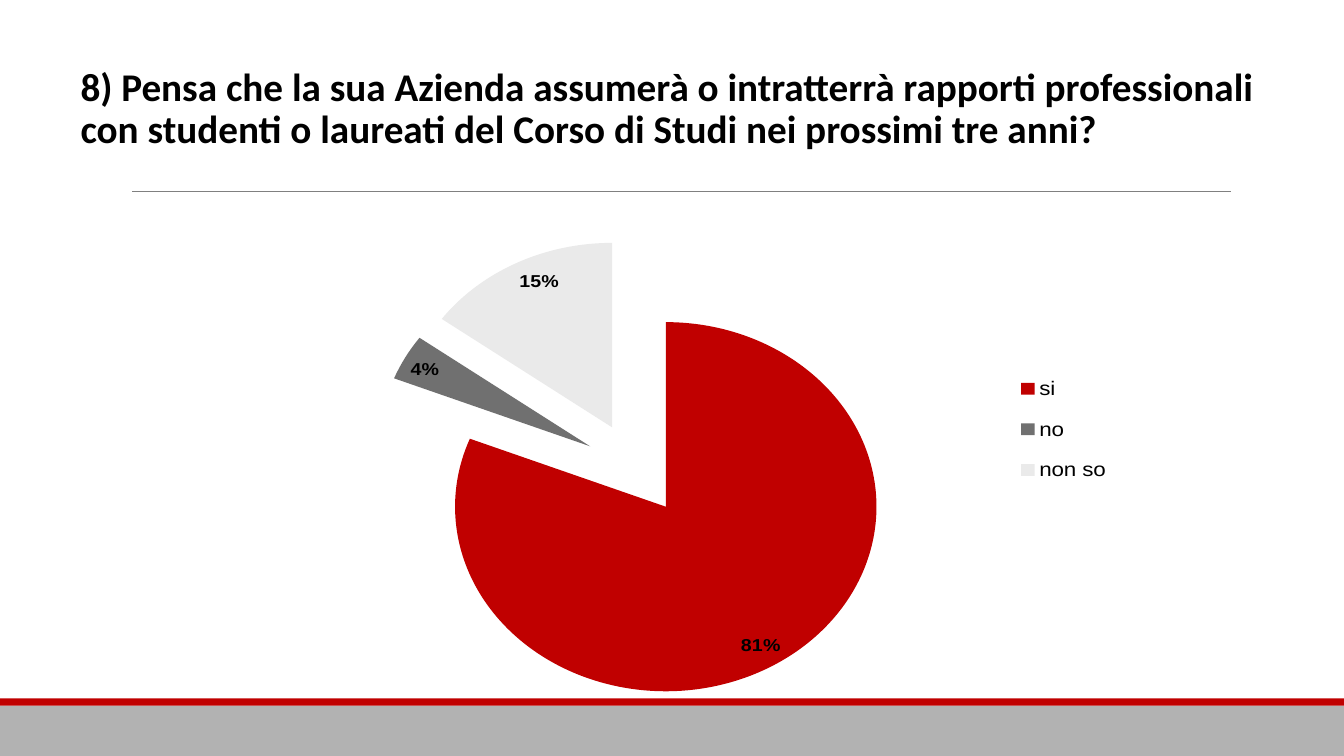
from dataclasses import dataclass

from lxml.etree import SubElement
from pptx import Presentation
from pptx.chart.chart import Chart
from pptx.chart.data import CategoryChartData
from pptx.dml.color import RGBColor
from pptx.enum.chart import XL_CHART_TYPE, XL_LABEL_POSITION, XL_LEGEND_POSITION
from pptx.enum.shapes import MSO_CONNECTOR, MSO_SHAPE
from pptx.enum.text import MSO_ANCHOR
from pptx.oxml import parse_xml
from pptx.oxml.ns import nsdecls, qn
from pptx.slide import Slide
from pptx.util import Cm, Pt


@dataclass(frozen=True)
class Theme:
    title_font: str = "Calibri"
    chart_font: str = "Arial"
    title_size: float = 28
    legend_size: float = 16
    label_size: float = 14
    text: RGBColor = RGBColor(0, 0, 0)
    red: RGBColor = RGBColor(0xC0, 0, 0)
    dark_gray: RGBColor = RGBColor(0x70, 0x70, 0x70)
    light_gray: RGBColor = RGBColor(0xEA, 0xEA, 0xEA)
    footer_gray: RGBColor = RGBColor(0xB2, 0xB2, 0xB2)
    rule_gray: RGBColor = RGBColor(0x80, 0x80, 0x80)


@dataclass(frozen=True)
class Band:
    top: float
    height: float
    color: RGBColor


@dataclass(frozen=True)
class Answer:
    name: str
    percent: int
    color: RGBColor


@dataclass(frozen=True)
class Layout:
    x: float
    y: float
    w: float
    h: float


THEME = Theme()
SLIDE_WIDTH = 33.87
SLIDE_HEIGHT = 19.05
EXPLOSION = 25
TITLE = (
    "8) Pensa che la sua Azienda assumerà o intratterrà rapporti professionali "
    "con studenti o laureati del Corso di Studi nei prossimi tre anni?"
)
BANDS = [
    Band(17.78, 1.27, THEME.footer_gray),
    Band(17.6, 0.18, THEME.red),
]
ANSWERS = [
    Answer("si", 81, THEME.red),
    Answer("no", 4, THEME.dark_gray),
    Answer("non so", 15, THEME.light_gray),
]
PLOT_LAYOUT = Layout(0.21, 0.03, 0.48, 0.94)
LEGEND_LAYOUT = Layout(0.87, 0.22, 0.12, 0.36)


def add_band(slide: Slide, band: Band) -> None:
    shape = slide.shapes.add_shape(
        MSO_SHAPE.RECTANGLE, 0, Cm(band.top), Cm(SLIDE_WIDTH), Cm(band.height)
    )
    shape.shadow.inherit = False
    shape.fill.solid()
    shape.fill.fore_color.rgb = band.color
    shape.line.fill.background()


def add_rule(slide: Slide) -> None:
    connector = slide.shapes.add_connector(
        MSO_CONNECTOR.STRAIGHT, Cm(3.33), Cm(4.82), Cm(31.01), Cm(4.82)
    )
    connector.line.color.rgb = THEME.rule_gray
    connector.line.width = Pt(0.5)
    SubElement(connector._element.spPr, qn("a:effectLst"))


def add_title(slide: Slide) -> None:
    shape = slide.shapes.add_textbox(Cm(2.03), Cm(1.7), Cm(30), Cm(3.18))
    frame = shape.text_frame
    frame.word_wrap = True
    frame.vertical_anchor = MSO_ANCHOR.TOP
    frame.margin_left = frame.margin_right = 0
    frame.margin_top = frame.margin_bottom = 0
    paragraph = frame.paragraphs[0]
    paragraph.text = TITLE
    paragraph.line_spacing = 0.9
    paragraph.font.name = THEME.title_font
    paragraph.font.size = Pt(THEME.title_size)
    paragraph.font.bold = True
    paragraph.font.color.rgb = THEME.text


def layout_xml(layout: Layout, target: str = ""):
    return parse_xml(
        f'<c:layout {nsdecls("c")}><c:manualLayout>{target}'
        '<c:xMode val="edge"/><c:yMode val="edge"/>'
        f'<c:x val="{layout.x}"/><c:y val="{layout.y}"/>'
        f'<c:w val="{layout.w}"/><c:h val="{layout.h}"/>'
        "</c:manualLayout></c:layout>"
    )


def place_plot_and_legend(chart: Chart) -> None:
    plot_area = chart._chartSpace.chart.plotArea
    for previous in plot_area.findall(qn("c:layout")):
        plot_area.remove(previous)
    plot_area.insert(0, layout_xml(PLOT_LAYOUT, '<c:layoutTarget val="inner"/>'))
    legend = chart.legend._element
    for previous in legend.findall(qn("c:layout")):
        legend.remove(previous)
    legend.find(qn("c:legendPos")).addnext(layout_xml(LEGEND_LAYOUT))


def add_answer_chart(slide: Slide) -> None:
    data = CategoryChartData()
    data.categories = [answer.name for answer in ANSWERS]
    data.add_series("Series 1", [answer.percent for answer in ANSWERS])
    chart = slide.shapes.add_chart(
        XL_CHART_TYPE.PIE, Cm(5.94), Cm(6.12), Cm(22.43), Cm(11.3), data
    ).chart
    chart.has_title = False
    chart.font.name = THEME.chart_font
    chart.font.size = Pt(10)
    chart.font.color.rgb = THEME.text

    chart.has_legend = True
    chart.legend.position = XL_LEGEND_POSITION.RIGHT
    chart.legend.include_in_layout = False
    chart.legend.font.name = THEME.chart_font
    chart.legend.font.size = Pt(THEME.legend_size)
    chart.legend.font.color.rgb = THEME.text
    place_plot_and_legend(chart)

    plot = chart.plots[0]
    plot.vary_by_categories = True
    series = plot.series[0]
    for index, answer in enumerate(ANSWERS):
        point = series.points[index]
        point.format.fill.solid()
        point.format.fill.fore_color.rgb = answer.color
        point.format.line.fill.background()
        fill_properties = point._element.find(qn("c:dPt") + f"[{index + 1}]")
        explosion = parse_xml(f'<c:explosion {nsdecls("c")} val="{EXPLOSION}"/>')
        fill_properties.find(qn("c:spPr")).addprevious(explosion)

    plot.has_data_labels = True
    labels = plot.data_labels
    labels.show_percentage = True
    labels.show_value = False
    labels.number_format = "0%"
    labels.number_format_is_linked = False
    labels.position = XL_LABEL_POSITION.INSIDE_END
    labels.font.name = THEME.chart_font
    labels.font.size = Pt(THEME.label_size)
    labels.font.bold = True
    labels.font.color.rgb = THEME.text


def main() -> None:
    presentation = Presentation()
    presentation.slide_width = Cm(SLIDE_WIDTH)
    presentation.slide_height = Cm(SLIDE_HEIGHT)
    slide = presentation.slides.add_slide(presentation.slide_layouts[6])
    for band in BANDS:
        add_band(slide, band)
    add_rule(slide)
    add_title(slide)
    add_answer_chart(slide)
    presentation.save("out.pptx")


if __name__ == "__main__":
    main()
